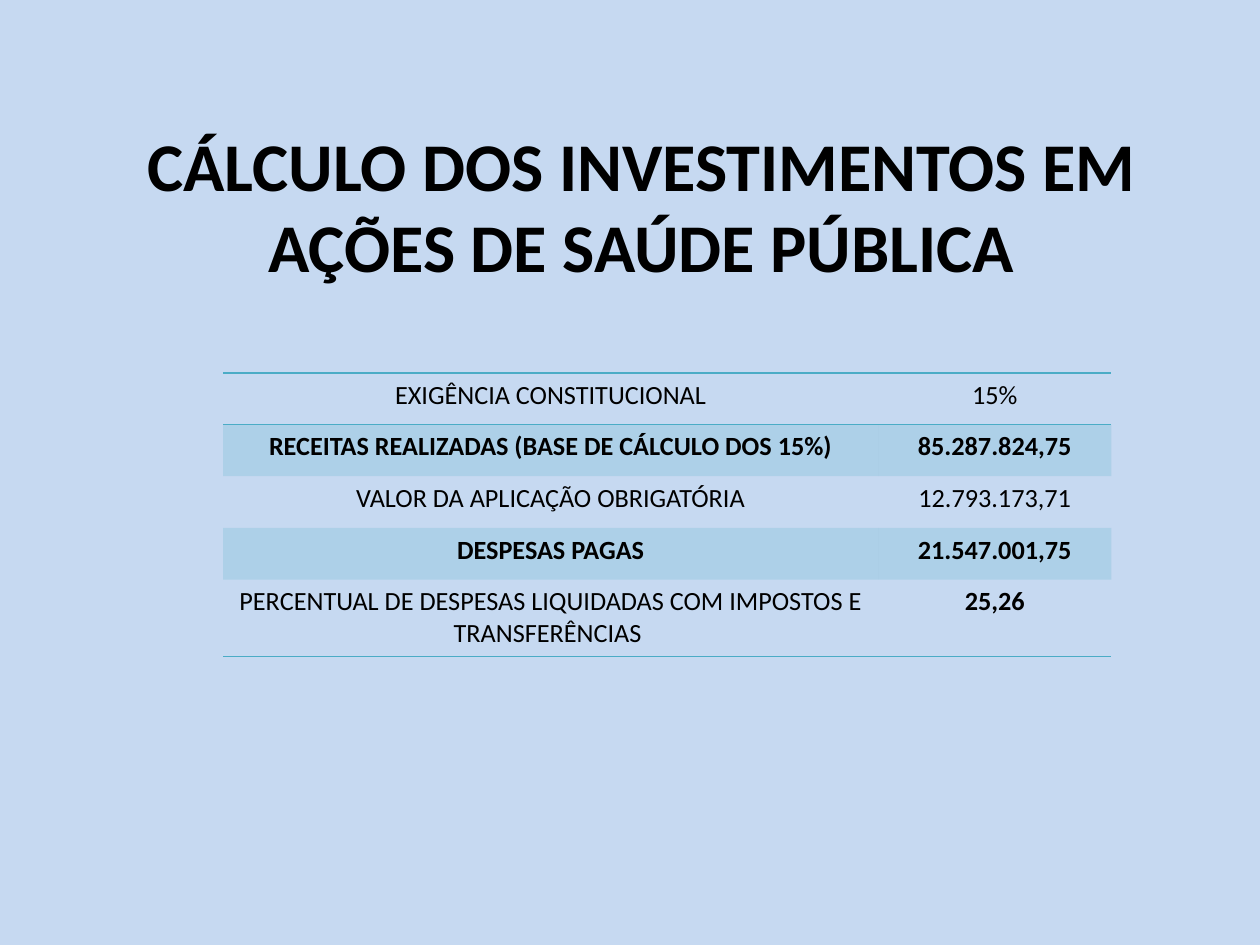
"""Build a slide on the calculation of public health investments."""
from typing import NamedTuple

from lxml import etree
from pptx import Presentation
from pptx.dml.color import RGBColor
from pptx.enum.text import MSO_ANCHOR, MSO_AUTO_SIZE, PP_ALIGN
from pptx.oxml.ns import qn
from pptx.util import Inches, Pt

CENTER = PP_ALIGN.CENTER
MIDDLE = MSO_ANCHOR.MIDDLE
NO_AUTOFIT = MSO_AUTO_SIZE.NONE
FONT = "Calibri"
COLORS = {"background": "C6D9F1", "text": "000000", "accent": "4BACC6"}
NO_STYLE_NO_GRID = "{2D5ABB26-0587-4C30-8999-92F81FD0307C}"
BAND_ALPHA = 20
COL_WIDTHS = (5.2, 1.85)
ROW_HEIGHT = 0.41


class Row(NamedTuple):
    label: str
    value: str
    label_bold: bool = False
    value_bold: bool = False
    banded: bool = False
    borders: tuple[str, ...] = ()


ROWS = [
    Row("EXIGÊNCIA CONSTITUCIONAL", "15%", borders=("lnT", "lnB")),
    Row("RECEITAS REALIZADAS (BASE DE CÁLCULO DOS 15%)", "85.287.824,75",
        True, True, banded=True),
    Row("VALOR DA APLICAÇÃO OBRIGATÓRIA", "12.793.173,71"),
    Row("DESPESAS PAGAS", "21.547.001,75", True, True, banded=True),
    Row("PERCENTUAL DE DESPESAS LIQUIDADAS COM IMPOSTOS E TRANSFERÊNCIAS ",
        "25,26", value_bold=True, borders=("lnB",)),
]


def rgb(name: str) -> RGBColor:
    return RGBColor.from_string(COLORS[name])


def write(tf, text: str, size: float, bold: bool) -> None:
    p = tf.paragraphs[0]
    p.alignment = CENTER
    r = p.add_run()
    r.text = text
    r.font.name = FONT
    r.font.size = Pt(size)
    r.font.bold = bold
    r.font.color.rgb = rgb("text")


def add_borders(cell, sides: tuple[str, ...]) -> None:
    tc_pr = cell._tc.get_or_add_tcPr()
    for i, side in enumerate(sides):
        ln = etree.Element(qn(f"a:{side}"), w=str(Pt(1)))
        fill = etree.SubElement(ln, qn("a:solidFill"))
        etree.SubElement(fill, qn("a:srgbClr"), val=COLORS["accent"])
        tc_pr.insert(i, ln)


def fill_cell(cell, banded: bool) -> None:
    if not banded:
        cell.fill.background()
        return
    cell.fill.solid()
    cell.fill.fore_color.rgb = rgb("accent")
    color = cell._tc.tcPr.find(".//" + qn("a:srgbClr"))
    etree.SubElement(color, qn("a:alpha"), val=str(BAND_ALPHA * 1000))


def add_title(s, text: str) -> None:
    sp = s.shapes.title
    sp.left, sp.top = Inches(0.59), Inches(0.76)
    sp.width, sp.height = Inches(9), Inches(1.73)
    tf = sp.text_frame
    tf.word_wrap = True
    tf.auto_size = NO_AUTOFIT
    tf.vertical_anchor = MIDDLE
    write(tf, text, 39, True)


def add_investment_table(s, rows: list[Row]) -> None:
    frame = s.shapes.add_table(
        len(rows), len(COL_WIDTHS), Inches(1.77), Inches(2.96),
        Inches(sum(COL_WIDTHS)), Inches(ROW_HEIGHT * len(rows)))
    frame.element.find(".//" + qn("a:tableStyleId")).text = NO_STYLE_NO_GRID
    table = frame.table
    table.first_row = False
    table.horz_banding = False
    for column, width in zip(table.columns, COL_WIDTHS):
        column.width = Inches(width)
    for i, row in enumerate(rows):
        table.rows[i].height = Inches(ROW_HEIGHT)
        contents = ((row.label, row.label_bold), (row.value, row.value_bold))
        for j, (text, bold) in enumerate(contents):
            cell = table.cell(i, j)
            write(cell.text_frame, text, 15, bold)
            fill_cell(cell, row.banded)
            add_borders(cell, row.borders)


def main() -> None:
    prs = Presentation()
    prs.slide_width, prs.slide_height = Inches(10), Inches(7.5)
    s = prs.slides.add_slide(prs.slide_layouts.get_by_name("Title Only"))
    s.background.fill.solid()
    s.background.fill.fore_color.rgb = rgb("background")
    add_title(s, "CÁLCULO DOS INVESTIMENTOS EM AÇÕES DE SAÚDE PÚBLICA")
    add_investment_table(s, ROWS)
    prs.save("out.pptx")


if __name__ == "__main__":
    main()
